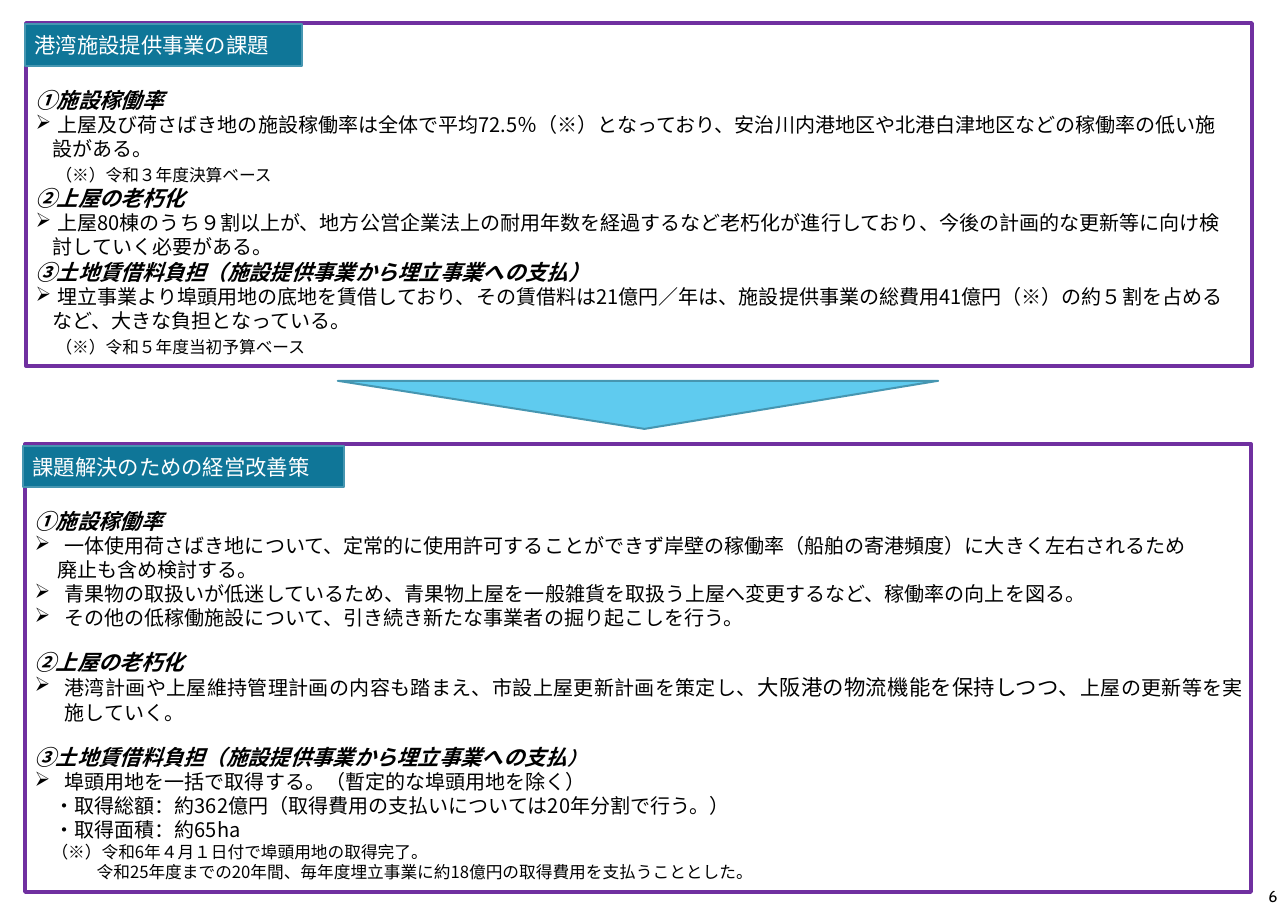
from dataclasses import dataclass
from typing import NamedTuple, Optional

from lxml import etree
from pptx import Presentation
from pptx import util as u
from pptx.dml.color import RGBColor
from pptx.enum import shapes, text
from pptx.oxml.ns import qn

PX = 9525  # EMU in one px, 96 px to the inch
CJK = "Noto Sans CJK JP"
COLOURS = {"frame": "7030A0", "tag": "0F7698", "edge": "4696B1",
           "arrow": "5FCBEF", "ink": "000000", "paper": "FFFFFF"}
HEAD, BODY, NOTE = 16, 15, 12.5  # text sizes in points
SECTION_GAP = 14.4


class Area(NamedTuple):
    left: int
    top: int
    width: int
    height: int

    def emu(self) -> list:
        return [side * PX for side in self]


class Span(NamedTuple):
    words: str
    size: float = BODY
    bold: bool = False
    font: str = CJK
    colour: str = "ink"


@dataclass
class Line:
    spans: list
    indent: int = 0
    bullet: bool = False
    before: float = 0
    pitch: float = 18  # line height in points


@dataclass
class Panel:
    frame: Area
    tag: Area
    heading: str
    lines: list


def head(words: str, before: float = 0, tail: Optional[Span] = None) -> Line:
    spans = [Span(words, HEAD, True)] + ([tail] if tail else [])
    return Line(spans, before=before, pitch=19.2)


def item(words: str, indent: int) -> Line:
    return Line([Span(words)], indent, bullet=True)


def more(words: str, indent: int) -> Line:
    return Line([Span(words)], indent)


def note(words: str, indent: int, pitch: float) -> Line:
    return Line([Span(words, NOTE)], indent, pitch=pitch)


PANELS = [
    Panel(Area(26, 23, 1223, 342), Area(25, 24, 276, 42), "港湾施設提供事業の課題", [
        head("①施設稼働率"),
        item("上屋及び荷さばき地の施設稼働率は全体で平均72.5％（※）となっており、"
             "安治川内港地区や北港白津地区などの稼働率の低い施", 22),
        more("設がある。", 17),
        note("（※）令和３年度決算ベース", 20, 18),
        head("②上屋の老朽化"),
        item("上屋80棟のうち９割以上が、地方公営企業法上の耐用年数を経過するなど"
             "老朽化が進行しており、今後の計画的な更新等に向け検", 22),
        more("討していく必要がある。", 17),
        head("③土地賃借料負担（施設提供事業から埋立事業への支払）"),
        item("埋立事業より埠頭用地の底地を賃借しており、その賃借料は21億円／年は、"
             "施設提供事業の総費用41億円（※）の約５割を占める", 22),
        more("など、大きな負担となっている。", 17),
        note("（※）令和５年度当初予算ベース", 20, 18),
    ]),
    Panel(Area(25, 443, 1223, 447), Area(23, 445, 320, 41), "課題解決のための経営改善策", [
        head("①施設稼働率"),
        item("一体使用荷さばき地について、定常的に使用許可することができず"
             "岸壁の稼働率（船舶の寄港頻度）に大きく左右されるため", 30),
        more("廃止も含め検討する。", 23),
        item("青果物の取扱いが低迷しているため、青果物上屋を一般雑貨を取扱う"
             "上屋へ変更するなど、稼働率の向上を図る。", 30),
        item("その他の低稼働施設について、引き続き新たな事業者の掘り起こしを行う。", 30),
        head("②上屋の老朽化", SECTION_GAP),
        Line([Span("港湾計画や上屋維持管理計画の内容も踏まえ、市設上屋更新計画を策定し、"),
              Span("大阪港の物流機能を保持しつつ、", HEAD, font="Arial"),
              Span("上屋の更新等を実施していく。")], 30, bullet=True, pitch=18.7),
        head("③土地賃借料負担（施設提供事業から埋立事業への支払", SECTION_GAP,
             Span("）", 14, True)),
        item("埠頭用地を一括で取得する。（暫定的な埠頭用地を除く）", 30),
        more("・取得総額：約362億円（取得費用の支払いについては20年分割で行う。）", 20),
        more("・取得面積：約65ha", 20),
        note("（※）令和6年４月１日付で埠頭用地の取得完了。", 17, 15),
        note("令和25年度までの20年間、毎年度埋立事業に約18億円の取得費用を支払うこととした。",
             62, 15),
    ]),
]
ARROW = [(936, 380), (643, 428), (337, 380)]
PAGE_NUMBER = Area(1212, 881, 72, 26)


def rgb(name: str) -> RGBColor:
    return RGBColor.from_string(COLOURS[name])


def paint(box, fill: Optional[str], line: str, width: float) -> None:
    box.shadow.inherit = False
    if fill:
        box.fill.solid()
        box.fill.fore_color.rgb = rgb(fill)
    else:
        box.fill.background()
    box.line.color.rgb = rgb(line)
    box.line.width = u.Pt(width)


def add_span(para, span: Span) -> None:
    run = para.add_run()
    run.text = span.words
    font = run.font
    font.name, font.size = span.font, u.Pt(span.size)
    font.bold = font.italic = span.bold
    font.color.rgb = rgb(span.colour)
    east_asian = etree.SubElement(run._r.get_or_add_rPr(), qn("a:ea"))
    east_asian.set("typeface", CJK)


def add_line(para, line: Line) -> None:
    para.alignment = text.PP_ALIGN.JUSTIFY
    para.line_spacing = u.Pt(line.pitch)
    para.space_before = u.Pt(line.before)
    props = para._p.get_or_add_pPr()
    props.set("marL", str(line.indent * PX))
    props.set("indent", str(-line.indent * PX if line.bullet else 0))
    if line.bullet:
        etree.SubElement(props, qn("a:buChar")).set("char", "➢")
    else:
        etree.SubElement(props, qn("a:buNone"))
    for span in line.spans:
        add_span(para, span)


def add_label(box, span: Span, align) -> None:
    frame = box.text_frame
    frame.word_wrap = True
    frame.vertical_anchor = text.MSO_ANCHOR.MIDDLE
    para = frame.paragraphs[0]
    para.alignment = align
    add_span(para, span)


def add_panel(page, panel: Panel) -> None:
    rectangle = shapes.MSO_SHAPE.RECTANGLE
    box = page.shapes.add_shape(rectangle, *panel.frame.emu())
    paint(box, None, "frame", 3)
    frame = box.text_frame
    frame.word_wrap = True
    frame.vertical_anchor = text.MSO_ANCHOR.TOP
    frame.margin_top, frame.margin_right = 64 * PX, 8 * PX
    for index, line in enumerate(panel.lines):
        add_line(frame.add_paragraph() if index else frame.paragraphs[0], line)

    tag = page.shapes.add_shape(rectangle, *panel.tag.emu())
    paint(tag, "tag", "edge", 1.5)
    add_label(tag, Span(panel.heading, HEAD, font="Cabin", colour="paper"),
              text.PP_ALIGN.LEFT)


def main() -> None:
    deck = Presentation()
    deck.slide_width, deck.slide_height = 1285 * PX, 907 * PX
    page = deck.slides.add_slide(deck.slide_layouts[6])

    # Issues above, measures below
    for panel in PANELS:
        add_panel(page, panel)

    # Downward arrow between the panels
    builder = page.shapes.build_freeform(*ARROW[0], scale=PX)
    builder.add_line_segments(ARROW[1:], close=True)
    paint(builder.convert_to_shape(), "arrow", "edge", 1.5)

    # Page number
    number = page.shapes.add_textbox(*PAGE_NUMBER.emu())
    add_label(number, Span("6", 12, font="Cabin"), text.PP_ALIGN.RIGHT)

    deck.save("out.pptx")


if __name__ == "__main__":
    main()
